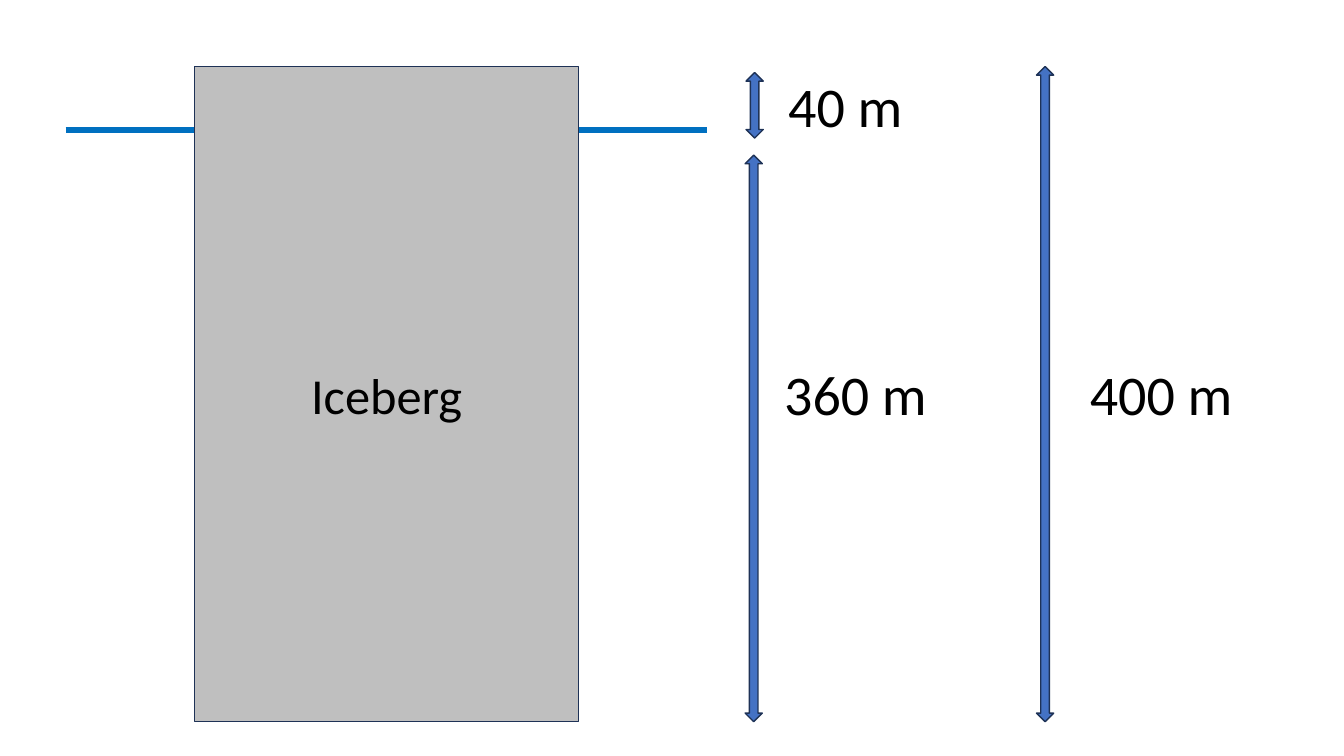
from pptx import Presentation
from pptx.dml.color import RGBColor
from pptx.enum.shapes import MSO_CONNECTOR, MSO_SHAPE
from pptx.enum.text import MSO_ANCHOR, MSO_AUTO_SIZE, PP_ALIGN
from pptx.oxml.ns import qn
from pptx.util import Inches, Pt
from lxml.etree import SubElement


def color(value):
    return RGBColor.from_string(value)


class Diagram:
    """Style and current slide; lengths are percent of the slide's size."""
    font, ink, outline = "Calibri", "000000", "1E3256"
    arrow_fill, ice_fill, water = "4472C4", "BFBFBF", "0070C0"
    arrow_width = 1.28

    def __init__(self, deck):
        self.width, self.height = deck.slide_width, deck.slide_height
        self.page = deck.slides.add_slide(deck.slide_layouts[6])

    def across(self, share):
        return round(self.width * share / 100)

    def down(self, share):
        return round(self.height * share / 100)

    def place(self, left, top, width, height):
        return (self.across(left), self.down(top),
                self.across(width), self.down(height))

    def set_text(self, frame, text, size, align):
        para = frame.paragraphs[0]
        para.text = text
        para.alignment = align
        para.font.name, para.font.size = self.font, Pt(size)
        para.font.color.rgb = color(self.ink)

    def shape(self, kind, fill, *area):
        shape = self.page.shapes.add_shape(kind, *self.place(*area))
        shape.shadow.inherit = False
        shape.fill.solid()
        shape.fill.fore_color.rgb = color(fill)
        shape.line.color.rgb = color(self.outline)
        shape.line.width = Pt(1)
        return shape

    def block(self, text, *area):
        frame = self.shape(MSO_SHAPE.RECTANGLE, self.ice_fill, *area).text_frame
        frame.vertical_anchor = MSO_ANCHOR.MIDDLE
        self.set_text(frame, text, 36, PP_ALIGN.CENTER)

    def arrow(self, left, top, bottom):
        self.shape(MSO_SHAPE.UP_DOWN_ARROW, self.arrow_fill,
                   left, top, self.arrow_width, bottom - top)

    def label(self, text, *area):
        box = self.page.shapes.add_textbox(*self.place(*area))
        box.text_frame.word_wrap = False
        box.text_frame.auto_size = MSO_AUTO_SIZE.SHAPE_TO_FIT_TEXT
        self.set_text(box.text_frame, text, 40, PP_ALIGN.LEFT)

    def waterline(self, left, right, level):
        line = self.page.shapes.add_connector(
            MSO_CONNECTOR.STRAIGHT, self.across(left), self.down(level),
            self.across(right), self.down(level))
        line.line.color.rgb = color(self.water)
        line.line.width = Pt(4.5)
        SubElement(line._element.spPr, qn("a:effectLst"))


def main():
    deck = Presentation()
    deck.slide_width, deck.slide_height = Inches(13.33), Inches(7.5)
    diagram = Diagram(deck)
    top, bottom = 8.8, 95.47

    # Water level, with the iceberg in front of it
    diagram.waterline(4.88, 52.59, 17.2)
    diagram.block("Iceberg", 14.48, top, 28.58, bottom - top)

    # Heights above water, below water and in total
    for left, start, end in ((55.51, 9.6, 18.27),
                             (55.44, 20.53, bottom),
                             (77.12, top, bottom)):
        diagram.arrow(left, start, end)

    # Height labels
    for text, left, start, width in (("40 m", 57.91, top, 10.05),
                                     ("360 m", 57.61, 46.93, 12.23),
                                     ("400 m", 80.35, 46.93, 12.23)):
        diagram.label(text, left, start, width, 10.27)

    deck.save("out.pptx")


if __name__ == "__main__":
    main()
